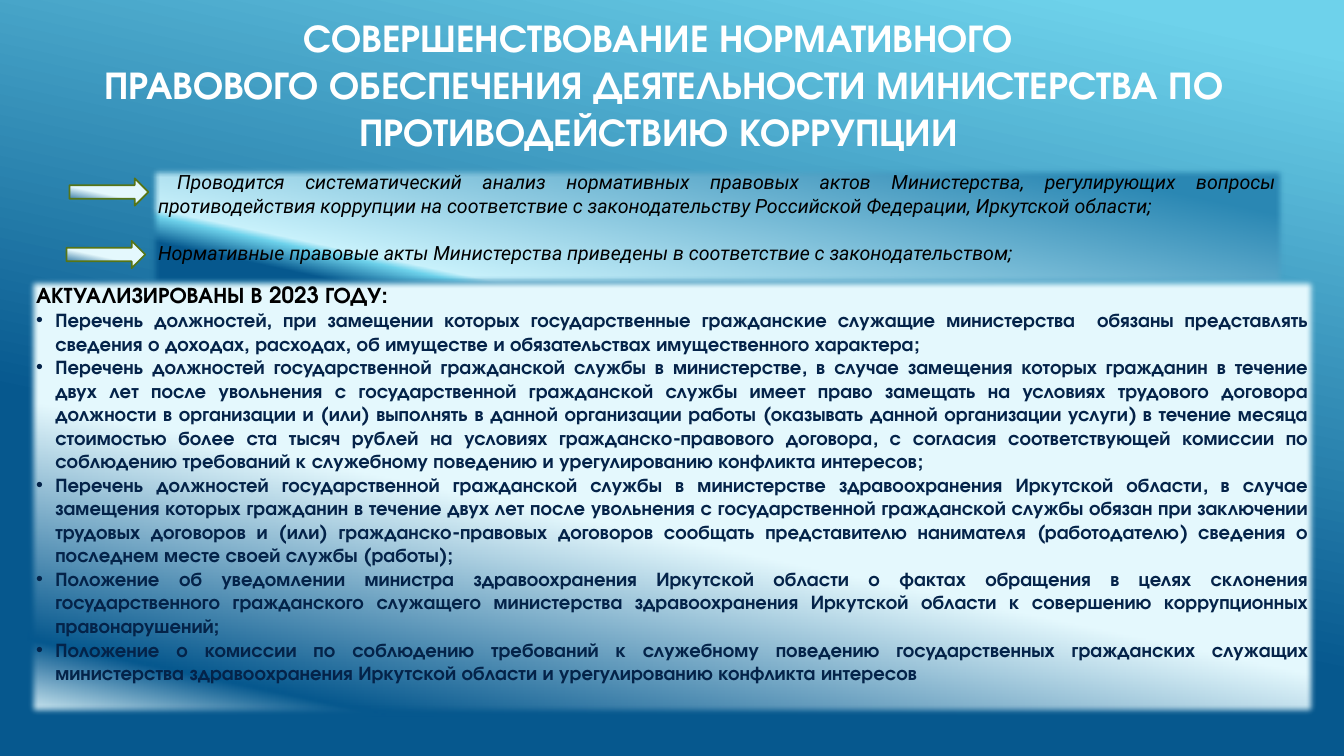
from copy import deepcopy
from dataclasses import dataclass

from lxml.etree import SubElement as add_element
from pptx import Presentation
from pptx.dml.color import RGBColor as Color
from pptx.enum.shapes import MSO_SHAPE as Shape
from pptx.enum.text import MSO_ANCHOR as Anchor, MSO_AUTO_SIZE as AutoSize, PP_ALIGN as Align
from pptx.oxml.ns import qn
from pptx.util import Inches, Pt


@dataclass(frozen=True)
class Theme:
    """Colours, gradients and type styles of the slide."""
    angle = 258
    soft_edge = Pt(5)
    outline = "567517"
    outline_width = Pt(1.25)
    indent = Inches(0.19)
    background = [(5, "6ED2EB"), (65, "06588E")]
    analysis = [(14, "2A87B3"), (78, "C8F1FB"), (80, "6ED2EB"), (87, "06588E")]
    updates = [(56, "E4F8FD"), (89, "06588E"), (100, "E4F8FD")]
    arrow = [(57, "E4F8FD"), (95, "06588E"), (100, "E4F8FD")]
    title_type = ("FFFFFF", {"name": "TeX Gyre Adventor", "size": Pt(27.9), "bold": True})
    analysis_type = ("000000", {"name": "Roboto", "size": Pt(14), "italic": True})
    heading_type = ("000000", {"name": "TeX Gyre Adventor", "size": Pt(16), "bold": True})
    item_type = ("042349", {"name": "TeX Gyre Adventor", "size": Pt(14), "bold": True})


THEME = Theme()

TITLE = ("СОВЕРШЕНСТВОВАНИЕ НОРМАТИВНОГО \vПРАВОВОГО ОБЕСПЕЧЕНИЯ ДЕЯТЕЛЬНОСТИ "
         "МИНИСТЕРСТВА ПО ПРОТИВОДЕЙСТВИЮ КОРРУПЦИИ ")
ANALYSIS = [
    "Проводится систематический анализ нормативных правовых актов Министерства, регулирующих "
    "вопросы противодействия коррупции на соответствие с законодательству Российской Федерации, "
    "Иркутской области;",
    "Нормативные правовые акты Министерства приведены в соответствие с законодательством;",
]
HEADING = "АКТУАЛИЗИРОВАНЫ В 2023 ГОДУ:"
UPDATES = [
    "Перечень должностей, при замещении которых государственные гражданские служащие "
    "министерства  обязаны представлять сведения о доходах, расходах, об имуществе и "
    "обязательствах имущественного характера;",
    "Перечень должностей государственной гражданской службы в министерстве, в случае замещения "
    "которых гражданин в течение двух лет после увольнения с государственной гражданской службы "
    "имеет право замещать на условиях трудового договора должности в организации и (или) "
    "выполнять в данной организации работы (оказывать данной организации услуги) в течение "
    "месяца стоимостью более ста тысяч рублей на условиях гражданско-правового договора, с "
    "согласия соответствующей комиссии по соблюдению требований к служебному поведению и "
    "урегулированию конфликта интересов;",
    "Перечень должностей государственной гражданской службы в министерстве здравоохранения "
    "Иркутской области, в случае замещения которых гражданин в течение двух лет после увольнения "
    "с государственной гражданской службы обязан при заключении трудовых договоров и (или) "
    "гражданско-правовых договоров сообщать представителю нанимателя (работодателю) сведения о "
    "последнем месте своей службы (работы);",
    "Положение об уведомлении министра здравоохранения Иркутской области о фактах обращения в "
    "целях склонения государственного гражданского служащего министерства здравоохранения "
    "Иркутской области к совершению коррупционных правонарушений;",
    "Положение о комиссии по соблюдению требований к служебному поведению государственных "
    "гражданских служащих министерства здравоохранения Иркутской области и урегулированию "
    "конфликта интересов",
]


@dataclass(frozen=True)
class Box:
    """A rectangle that can be divided by percentages."""
    left: int
    top: int
    width: int
    height: int

    def inner(self, left, top, width, height):
        """Return the inner box given in percent of this one."""
        return Box(int(self.left + self.width * left / 100), int(self.top + self.height * top / 100),
                   int(self.width * width / 100), int(self.height * height / 100))

    def edges(self):
        """Return left, top, width and height."""
        return self.left, self.top, self.width, self.height


def apply_format(target, values):
    """Set each named attribute on the target."""
    for name, value in values.items():
        setattr(target, name, value)


def fill_gradient(fill, element, stops):
    """Fill with a linear gradient through all the stops."""
    fill.gradient()
    fill.gradient_angle = THEME.angle
    stop_list = element.find(f".//{qn('a:gsLst')}")
    stop_list[:] = []
    for percent, color in stops:
        stop = add_element(stop_list, qn("a:gs"), pos=str(percent * 1000))
        add_element(stop, qn("a:srgbClr"), val=color)


def write_paragraph(paragraph, text, type_style, align=Align.JUSTIFY):
    """Write one aligned paragraph in a type style."""
    color, font_values = type_style
    paragraph.text = text
    paragraph.alignment = align
    for run in paragraph.runs:
        apply_format(run.font, font_values)
        run.font.color.rgb = Color.from_string(color)
    for line_break in paragraph._p.findall(qn("a:br")):
        line_break.insert(0, deepcopy(paragraph.runs[0]._r.find(qn("a:rPr"))))


def add_panel(slide, box, stops):
    """Add a soft-edged panel and return its text frame."""
    panel = slide.shapes.add_shape(Shape.RECTANGLE, *box.edges())
    fill_gradient(panel.fill, panel.element, stops)
    panel.line.fill.background()
    panel.shadow.inherit = False
    effects = panel.element.spPr.find(qn("a:effectLst"))
    add_element(effects, qn("a:softEdge"), rad=str(THEME.soft_edge))
    apply_format(panel.text_frame, {"word_wrap": True, "vertical_anchor": Anchor.TOP})
    return panel.text_frame


def add_arrow(slide, box):
    """Add an outlined arrow pointing right."""
    arrow = slide.shapes.add_shape(Shape.RIGHT_ARROW, *box.edges())
    fill_gradient(arrow.fill, arrow.element, THEME.arrow)
    arrow.line.color.rgb = Color.from_string(THEME.outline)
    arrow.line.width = THEME.outline_width
    arrow.shadow.inherit = False


def add_title(slide, box):
    """Place and write the slide title."""
    title = slide.shapes.title
    apply_format(title, dict(zip(("left", "top", "width", "height"), box.edges())))
    apply_format(title.text_frame, {"word_wrap": True, "auto_size": AutoSize.NONE,
                                    "vertical_anchor": Anchor.MIDDLE})
    write_paragraph(title.text_frame.paragraphs[0], TITLE, THEME.title_type, Align.CENTER)


def add_analysis(slide, box):
    """Add the analysis panel with an arrow to each statement."""
    frame = add_panel(slide, box.inner(6.69, 0, 93.31, 100), THEME.analysis)
    first, second = frame.paragraphs[0], frame.add_paragraph()
    for paragraph, text in zip((first, second), ANALYSIS):
        write_paragraph(paragraph, text, THEME.analysis_type)
    first._p.get_or_add_pPr().set("indent", str(THEME.indent))
    second.space_before = Pt(17)
    for left, top in ((0.25, 10.74), (0, 61.98)):
        add_arrow(slide, box.inner(left, top, 6.45, 22.31))


def add_updates(slide, box):
    """Add the panel with the bulleted list of updated acts."""
    frame = add_panel(slide, box, THEME.updates)
    write_paragraph(frame.paragraphs[0], HEADING, THEME.heading_type)
    for text in UPDATES:
        paragraph = frame.add_paragraph()
        write_paragraph(paragraph, text, THEME.item_type)
        properties = paragraph._p.get_or_add_pPr()
        properties.set("marL", str(THEME.indent))
        properties.set("indent", str(-THEME.indent))
        add_element(properties, qn("a:buFont"), typeface="Arial")
        add_element(properties, qn("a:buChar"), char="•")


def main():
    """Build and save the presentation."""
    presentation = Presentation()
    apply_format(presentation, {"slide_width": Inches(13.33), "slide_height": Inches(7.5)})
    slide = presentation.slides.add_slide(presentation.slide_layouts[5])
    fill_gradient(slide.background.fill, slide.element, THEME.background)
    page = Box(0, 0, presentation.slide_width, presentation.slide_height)
    add_title(slide, page.inner(6.38, 6.53, 86.05, 9.2))
    add_analysis(slide, page.inner(4.95, 21.87, 90.78, 16.13))
    add_updates(slide, page.inner(1.95, 36.53, 96.17, 58.4))
    presentation.save("out.pptx")


if __name__ == "__main__":
    main()
